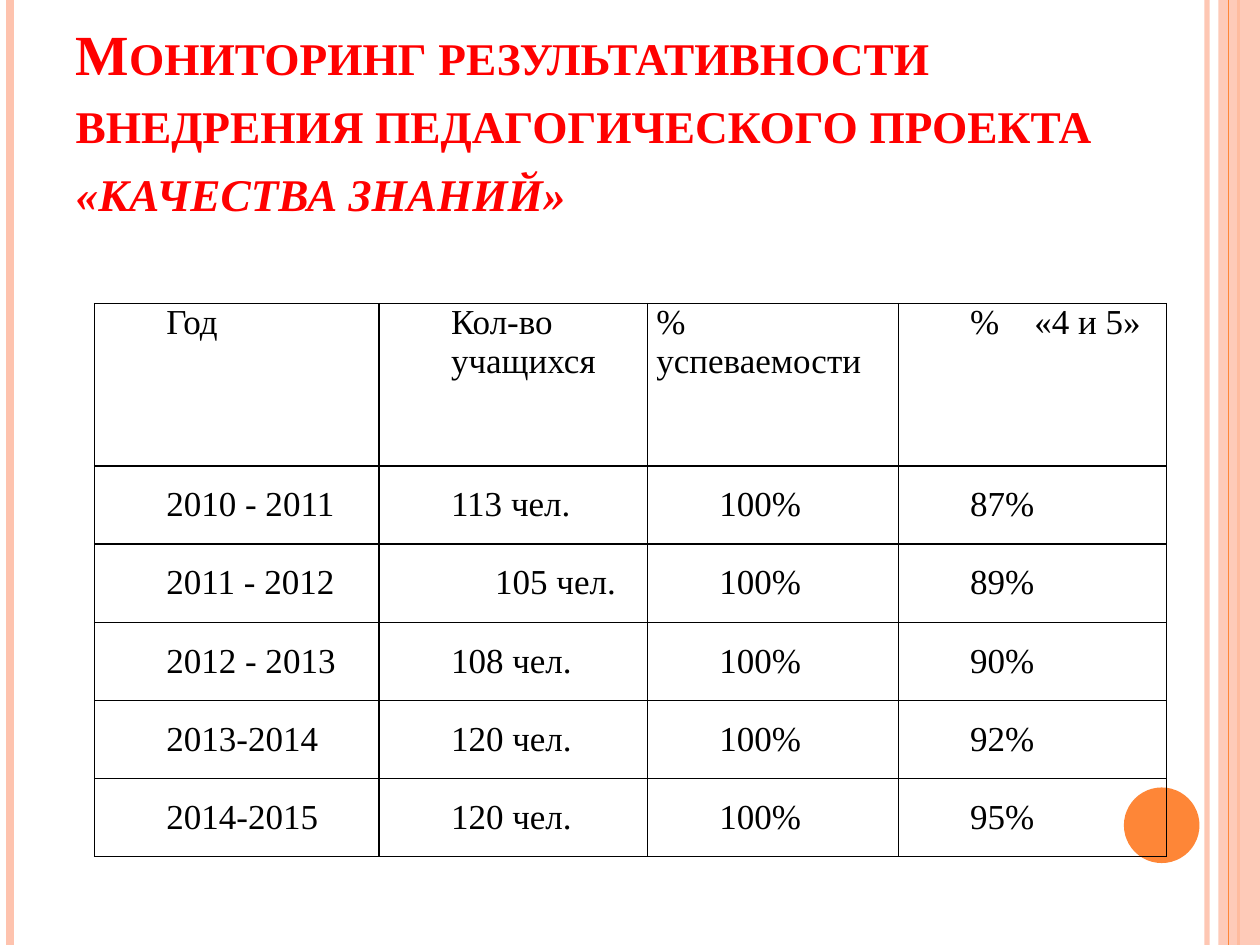
from lxml.etree import SubElement
from pptx import Presentation
from pptx.dml.color import RGBColor
from pptx.enum.shapes import MSO_CONNECTOR, MSO_SHAPE
from pptx.enum.text import MSO_ANCHOR, MSO_AUTO_SIZE, PP_ALIGN
from pptx.oxml.ns import qn
from pptx.util import Inches, Pt

RED = RGBColor(0xFF, 0x00, 0x00)
BLACK = RGBColor(0x00, 0x00, 0x00)
ORANGE = RGBColor(0xFE, 0x86, 0x37)
PEACH = RGBColor(0xFE, 0xC3, 0xAE)
FONT = "Times New Roman"

TITLE = "Мониторинг результативности внедрения педагогического проекта "
TITLE_END = "«качества знаний»"
HEADER = ["Год", "Кол-во учащихся", "% успеваемости", ("%", " ", "«4 и 5»")]
RESULTS = [
    ["2010 - 2011", "113 чел.", "100%", "87%"],
    ["2011 - 2012", "105 чел.", "100%", "89%"],
    ["2012 - 2013", "108 чел.", "100%", "90%"],
    ["2013-2014", "120 чел.", "100%", "92%"],
    ["2014-2015", "120 чел.", "100%", "95%"],
]
COL_WIDTHS = [2.26, 2.13, 1.99, 2.13]
HEADER_HEIGHT, ROW_HEIGHT = 1.29, 0.62
INDENT = 0.5
INDENTS = {(0, 2): 0, (2, 1): 0.85}  # cells that differ from INDENT


def add_run(p, text, size=20, color=BLACK, bold=False, italic=False,
            small_caps=False, spacing=0):
    r = p.add_run()
    r.text = text
    f = r.font
    f.name, f.size, f.bold, f.italic = FONT, Pt(size), bold, italic
    f.color.rgb = color
    r_pr = r.font._element
    if small_caps:
        r_pr.set("cap", "small")
    if spacing:
        r_pr.set("spc", str(spacing * 100))


def set_alpha(parent, percent):
    """Make the solid colour found inside parent partly transparent."""
    color = next(parent.iter(qn("a:srgbClr")))
    SubElement(color, qn("a:alpha")).set("val", str(percent * 1000))


def add_stripe(slide, x, color, width, alpha=None):
    line = slide.shapes.add_connector(
        MSO_CONNECTOR.STRAIGHT, Inches(x), 0, Inches(x), Inches(7.5))
    line.line.color.rgb = color
    line.line.width = Pt(width)
    sp_pr = line._element.spPr
    if alpha:
        set_alpha(sp_pr, alpha)
    SubElement(sp_pr, qn("a:effectLst"))


def add_filled(slide, shape_type, box, color, alpha=None):
    sp = slide.shapes.add_shape(shape_type, *map(Inches, box))
    sp.shadow.inherit = False
    sp.fill.solid()
    sp.fill.fore_color.rgb = color
    sp.line.fill.background()
    if alpha:
        set_alpha(sp._element.spPr, alpha)


def add_borders(cell):
    tc_pr = cell._tc.get_or_add_tcPr()
    for i, side in enumerate(("a:lnL", "a:lnR", "a:lnT", "a:lnB")):
        ln = tc_pr.makeelement(qn(side), {"w": str(Pt(1))})
        fill = SubElement(ln, qn("a:solidFill"))
        SubElement(fill, qn("a:srgbClr")).set("val", str(BLACK))
        tc_pr.insert(i, ln)


def add_decoration(slide):
    add_stripe(slide, 9.58, PEACH, 3, alpha=93)
    add_stripe(slide, 0.08, PEACH, 4.5)
    add_stripe(slide, 9.83, ORANGE, 1.5)
    add_filled(slide, MSO_SHAPE.RECTANGLE, (9.67, 0, 0.33, 7.5), PEACH, alpha=87)
    add_stripe(slide, 9.75, ORANGE, 0.75)
    add_filled(slide, MSO_SHAPE.OVAL, (8.92, 6.25, 0.6, 0.6), ORANGE)


def fill_title(title):
    title.left, title.top = Inches(0.5), Inches(0.3)
    title.width, title.height = Inches(9), Inches(1.95)
    tf = title.text_frame
    tf.auto_size = MSO_AUTO_SIZE.NONE
    tf.word_wrap = True
    tf.vertical_anchor = MSO_ANCHOR.BOTTOM
    tf.margin_bottom = Inches(0.48)
    p = tf.paragraphs[0]
    p.alignment = PP_ALIGN.LEFT
    p.line_spacing = Pt(38.9)
    style = dict(size=32.4, color=RED, bold=True, small_caps=True)
    add_run(p, TITLE, **style)
    add_run(p, TITLE_END, italic=True, **style)


def add_results_table(slide):
    rows = [HEADER] + RESULTS
    heights = [HEADER_HEIGHT] + [ROW_HEIGHT] * len(RESULTS)
    frame = slide.shapes.add_table(
        len(rows), len(COL_WIDTHS), Inches(0.75), Inches(2.41),
        Inches(sum(COL_WIDTHS)), Inches(sum(heights)))
    table = frame.table
    for column, width in zip(table.columns, COL_WIDTHS):
        column.width = Inches(width)
    for i, (values, height) in enumerate(zip(rows, heights)):
        table.rows[i].height = Inches(height)
        for j, value in enumerate(values):
            cell = table.cell(i, j)
            cell.fill.background()
            cell.margin_left = cell.margin_right = Inches(0.07)
            cell.margin_top = cell.margin_bottom = 0
            add_borders(cell)
            p = cell.text_frame.paragraphs[0]
            p_pr = p._p.get_or_add_pPr()
            p_pr.set("marL", str(Inches(INDENTS.get((i, j), INDENT))))
            p_pr.set("indent", "0")
            if i > 0:
                p.alignment = PP_ALIGN.JUSTIFY
                p.line_spacing = 1.5
            for text in [value] if isinstance(value, str) else value:
                add_run(p, text, spacing=15 if text == " " else 0)


def main():
    prs = Presentation()
    prs.slide_width, prs.slide_height = Inches(10), Inches(7.5)
    slide = prs.slides.add_slide(prs.slide_layouts[5])
    add_decoration(slide)
    fill_title(slide.shapes.title)
    add_results_table(slide)
    prs.save("out.pptx")


if __name__ == "__main__":
    main()
